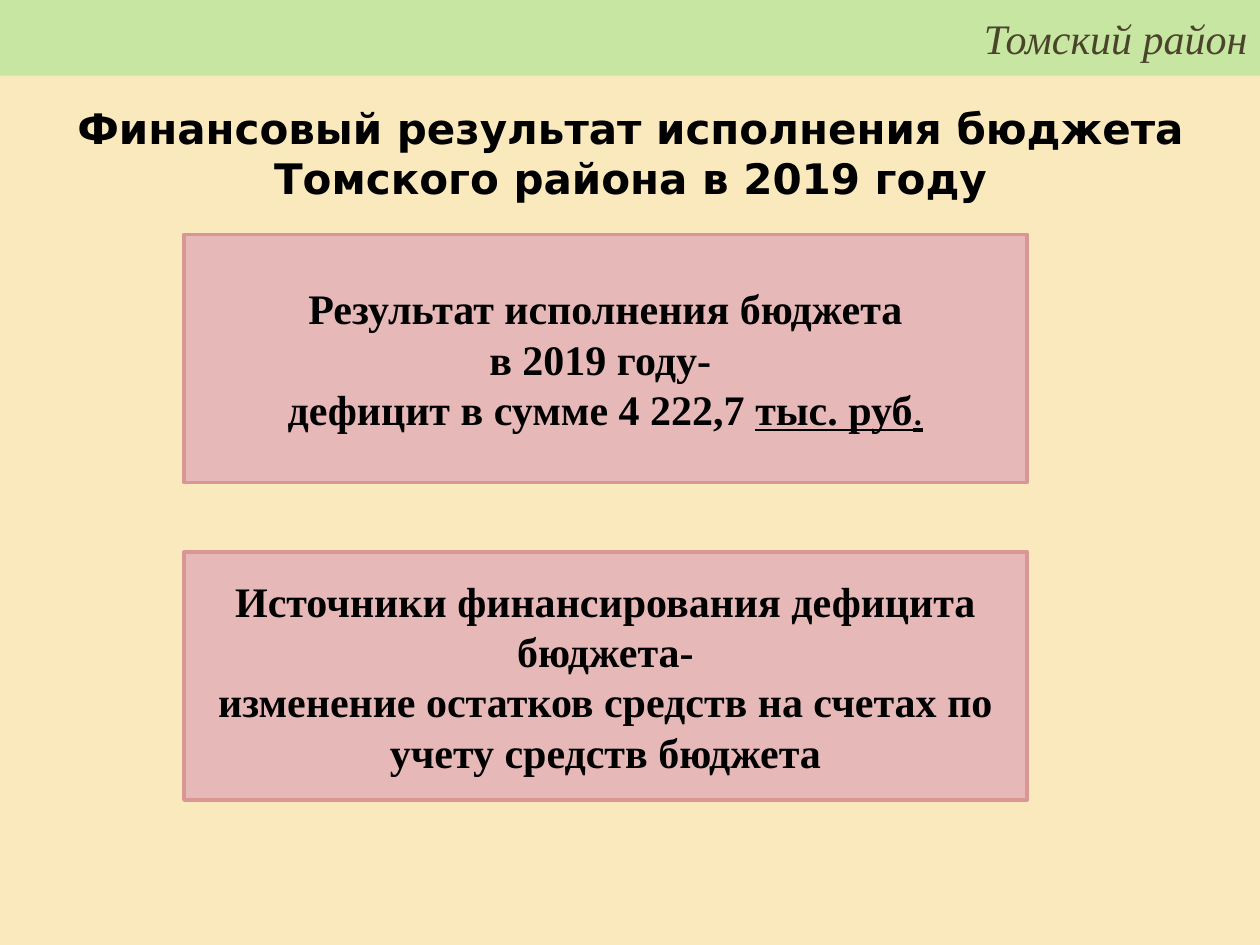
from dataclasses import dataclass

from pptx import Presentation
from pptx.dml.color import RGBColor
from pptx.enum import shapes, text
from pptx.util import Inches, Pt

CREAM = RGBColor(0xF9, 0xE9, 0xBD)
GREEN = RGBColor(0xC6, 0xE6, 0xA2)
PINK = RGBColor(0xE6, 0xB9, 0xB8)
ROSE = RGBColor(0xD9, 0x96, 0x94)
BROWN = RGBColor(0x4A, 0x45, 0x2A)
BLACK = RGBColor(0, 0, 0)
SERIF = "Times New Roman"


@dataclass
class Card:
    top: float
    lines: list[str]


CARDS = [
    Card(1.86, ["Результат исполнения бюджета", "в 2019 году- ",
                "дефицит в сумме 4 222,7 "]),
    Card(4.38, ["Источники финансирования дефицита бюджета-",
                "изменение остатков средств на счетах по учету средств бюджета"]),
]


def write(para, words: str, font=SERIF, color=BLACK, bold=True, italic=False,
          under=False, align=text.PP_ALIGN.CENTER) -> None:
    """Add one formatted run to a paragraph."""
    para.alignment = align
    run = para.add_run()
    run.text = words
    style = run.font
    style.name, style.size = font, Pt(24)
    style.bold, style.italic = bold, italic
    style.underline = under or None
    style.color.rgb = color


def block(slide, left: float, top: float, width: float, height: float,
          fill: RGBColor, line: RGBColor | None = None):
    """Draw a flat rectangle with its text centred vertically."""
    box = slide.shapes.add_shape(
        shapes.MSO_SHAPE.RECTANGLE,
        Inches(left), Inches(top), Inches(width), Inches(height))
    box.shadow.inherit = False
    box.fill.solid()
    box.fill.fore_color.rgb = fill
    if line is None:
        box.line.fill.background()
    else:
        box.line.color.rgb = line
        box.line.width = Pt(2)
    box.text_frame.word_wrap = True
    box.text_frame.vertical_anchor = text.MSO_ANCHOR.MIDDLE
    return box


def draw(slide, card: Card):
    """Draw a card with one paragraph per line."""
    frame = block(slide, 1.46, card.top, 6.69, 1.97, PINK, ROSE).text_frame
    for i, words in enumerate(card.lines):
        para = frame.add_paragraph() if i else frame.paragraphs[0]
        write(para, words)
    return frame


def main() -> None:
    deck = Presentation()
    deck.slide_width, deck.slide_height = Inches(10), Inches(7.5)
    slide = deck.slides.add_slide(deck.slide_layouts[5])
    slide.background.fill.solid()
    slide.background.fill.fore_color.rgb = CREAM

    # Header band
    band = block(slide, 0, 0, 10, 0.6, GREEN)
    write(band.text_frame.paragraphs[0], "Томский район", color=BROWN,
          bold=False, italic=True, align=text.PP_ALIGN.RIGHT)

    # Title
    title = slide.shapes.title
    title.left, title.top = Inches(0.2), Inches(0.76)
    title.width, title.height = Inches(9.61), Inches(0.91)
    frame = title.text_frame
    frame.word_wrap = True
    frame.auto_size = text.MSO_AUTO_SIZE.NONE
    frame.vertical_anchor = text.MSO_ANCHOR.TOP
    write(frame.paragraphs[0],
          "Финансовый результат исполнения бюджета Томского района в 2019 году",
          font="DejaVu Sans")

    # Result and sources cards
    result, _ = [draw(slide, card) for card in CARDS]

    # Underlined unit after the deficit
    total = result.paragraphs[-1]
    write(total, "тыс. руб", under=True)
    write(total, ".", font="Calibri", bold=False, under=True)

    deck.save("out.pptx")


if __name__ == "__main__":
    main()
